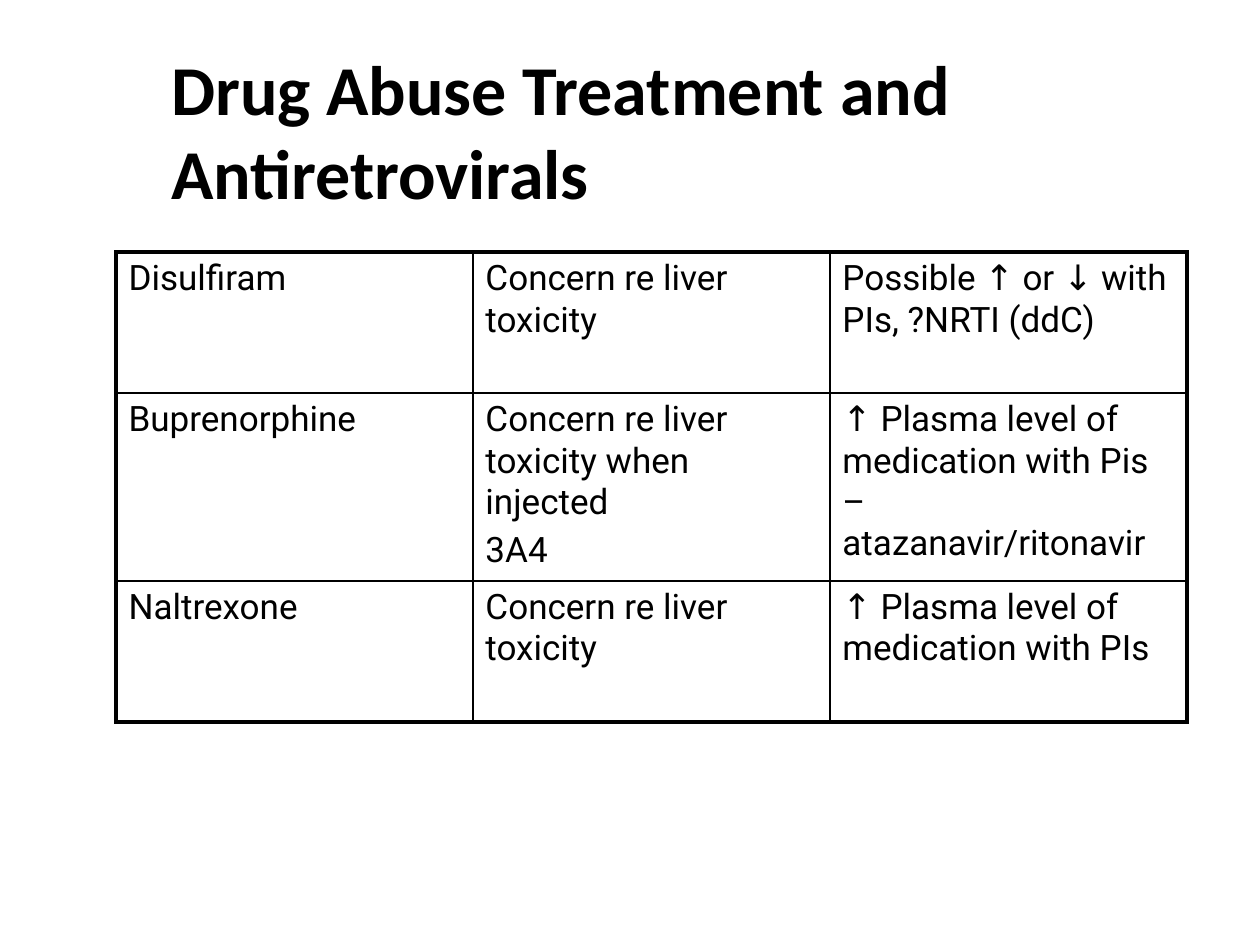
from lxml import etree
from pptx import Presentation
from pptx.dml.color import RGBColor
from pptx.enum.text import MSO_ANCHOR
from pptx.oxml.ns import qn
from pptx.util import Inches, Pt

MIDDLE = MSO_ANCHOR.MIDDLE
BLACK = RGBColor(0, 0, 0)
THICK, THIN = 2.25, 1

ROWS = [
    ["Disulfiram", "Concern re liver toxicity",
     "Possible ↑ or ↓ with PIs, ?NRTI (ddC)"],
    ["Buprenorphine", "Concern re liver toxicity when injected\n3A4",
     "↑ Plasma level of medication with Pis – atazanavir/ritonavir"],
    ["Naltrexone", "Concern re liver toxicity",
     "↑ Plasma level of medication with PIs"],
]


def write(frame, text, font="Roboto", size=20, bold=False, color=BLACK, before=0):
    frame.word_wrap = True
    for i, line in enumerate(text.split("\n")):
        para = frame.paragraphs[0] if i == 0 else frame.add_paragraph()
        para.space_before = Pt(before)
        run = para.add_run()
        run.text = line
        run.font.name = font
        run.font.size = Pt(size)
        run.font.bold = bold
        run.font.color.rgb = color


class Deck:
    """Draws styled elements on the current slide."""

    def __init__(self, slide, line=BLACK):
        self.slide = slide
        self.line = line

    def title(self, text, left, top, width, height):
        box = self.slide.shapes.add_textbox(
            Inches(left), Inches(top), Inches(width), Inches(height))
        box.text_frame.vertical_anchor = MIDDLE
        write(box.text_frame, text, font="Calibri", size=40, bold=True)

    def edge(self, cell, side, width):
        props = cell._tc.get_or_add_tcPr()
        line = etree.SubElement(props, qn(f"a:ln{side}"), w=str(Pt(width)))
        fill = etree.SubElement(line, qn("a:solidFill"))
        etree.SubElement(fill, qn("a:srgbClr"), val=str(self.line))

    def table(self, rows, left, top, width, height):
        down, across = len(rows), len(rows[0])
        table = self.slide.shapes.add_table(
            down, across, Inches(left), Inches(top),
            Inches(width), Inches(height)).table
        table.first_row = table.horz_banding = False
        for r, row in enumerate(rows):
            for c, text in enumerate(row):
                cell = table.cell(r, c)
                write(cell.text_frame, text, before=4)
                outer = {"L": c == 0, "R": c == across - 1,
                         "T": r == 0, "B": r == down - 1}
                for side, rim in outer.items():
                    self.edge(cell, side, THICK if rim else THIN)
                cell.fill.background()


def main():
    prs = Presentation()
    prs.slide_width, prs.slide_height = Inches(10), Inches(7.5)
    deck = Deck(prs.slides.add_slide(prs.slide_layouts[6]))
    deck.title("Drug Abuse Treatment and Antiretrovirals", 1.26, 0.23, 7.91, 1.6)
    deck.table(ROWS, 0.92, 2, 8.5, 3.36)
    prs.save("out.pptx")


if __name__ == "__main__":
    main()
